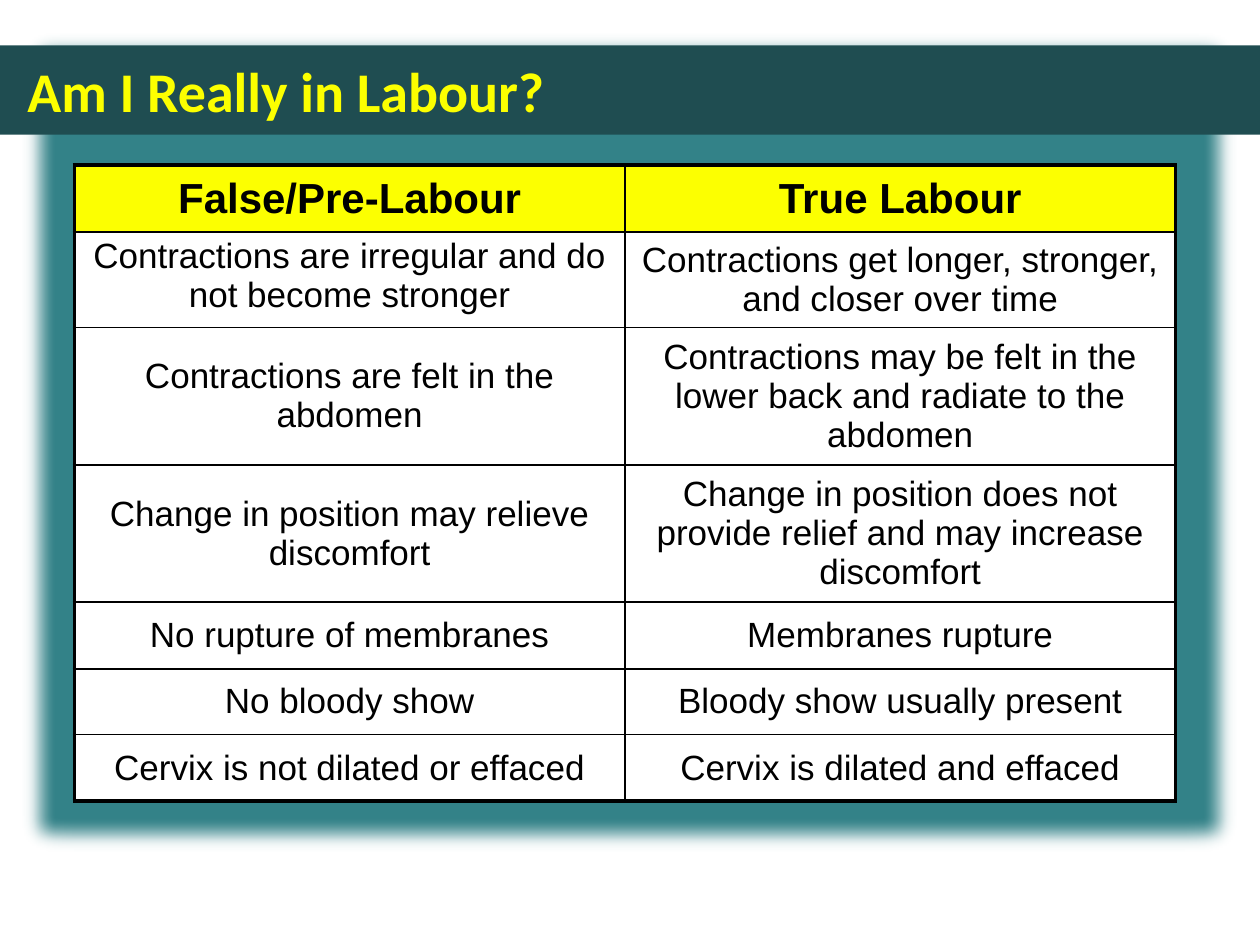
from lxml.etree import SubElement
from pptx import Presentation
from pptx.dml.color import RGBColor
from pptx.enum.shapes import MSO_SHAPE as Shape
from pptx.enum.text import MSO_ANCHOR as Anchor, PP_ALIGN as Align
from pptx.oxml.ns import qn
from pptx.util import Inches, Pt

TEAL = RGBColor(0x33, 0x82, 0x88)
DARK_TEAL = RGBColor(0x1F, 0x4D, 0x51)
TITLE_YELLOW = RGBColor(0xFC, 0xFF, 0x00)
HEADER_YELLOW = RGBColor(0xFC, 0xFF, 0x01)
WHITE = RGBColor(0xFF, 0xFF, 0xFF)
BLACK = RGBColor(0, 0, 0)

ROWS = [
    (0.53, "False/Pre-Labour", "True Labour"),
    (0.76, "Contractions are irregular and do not become stronger",
     "Contractions get longer, stronger, and closer over time"),
    (1.09, "Contractions are felt in the abdomen",
     "Contractions may be felt in the lower back and radiate to the abdomen"),
    (1.09, "Change in position may relieve discomfort",
     "Change in position does not provide relief and may increase discomfort"),
    (0.53, "No rupture of membranes", "Membranes rupture"),
    (0.52, "No bloody show", "Bloody show usually present"),
    (0.53, "Cervix is not dilated or effaced", "Cervix is dilated and effaced"),
]
COLUMN_WIDTH = 4.37


def add_block(page, left, top, width, height, color):
    block = page.shapes.add_shape(
        Shape.RECTANGLE, Inches(left), Inches(top), Inches(width), Inches(height))
    block.shadow.inherit = False
    block.fill.solid()
    block.fill.fore_color.rgb = color
    block.line.fill.background()
    return block


def set_borders(cell, outer_sides):
    properties = cell._tc.get_or_add_tcPr()
    for index, side in enumerate(("lnL", "lnR", "lnT", "lnB")):
        width = Pt(2.25 if side in outer_sides else 1)
        line = properties.makeelement(qn(f"a:{side}"), {"w": str(width)})
        fill = SubElement(line, qn("a:solidFill"))
        SubElement(fill, qn("a:srgbClr"), val=str(BLACK))
        properties.insert(index, line)


deck = Presentation()
deck.slide_width, deck.slide_height = Inches(10), Inches(7.5)
page = deck.slides.add_slide(deck.slide_layouts[6])

panel = add_block(page, 0.12, 0.21, 9.76, 6.61, TEAL)
effects = panel._element.spPr.find(qn("a:effectLst"))
SubElement(effects, qn("a:softEdge"), rad=str(Pt(12.5)))
add_block(page, 0, 0.36, 10, 0.71, DARK_TEAL)

title = page.shapes.add_textbox(Inches(0.12), Inches(0.36), Inches(9.76), Inches(0.79))
frame = title.text_frame
frame.word_wrap = True
frame.vertical_anchor = Anchor.MIDDLE
frame.margin_bottom = Inches(0.13)
para = frame.paragraphs[0]
para.text = "Am I Really in Labour?"
para.font.name, para.font.size, para.font.bold = "Calibri", Pt(32), True
para.font.color.rgb = TITLE_YELLOW

table = page.shapes.add_table(
    len(ROWS), 2, Inches(0.59), Inches(1.31), Inches(2 * COLUMN_WIDTH),
    Inches(sum(row[0] for row in ROWS))).table
for column in table.columns:
    column.width = Inches(COLUMN_WIDTH)

for r, (height, *texts) in enumerate(ROWS):
    table.rows[r].height = Inches(height)
    header = r == 0
    for c, text in enumerate(texts):
        cell = table.cell(r, c)
        cell.fill.solid()
        cell.fill.fore_color.rgb = HEADER_YELLOW if header else WHITE
        cell.vertical_anchor = Anchor.TOP if (r, c) == (1, 0) else Anchor.MIDDLE
        cell.margin_left = cell.margin_right = Inches(0.09)
        cell.margin_top = cell.margin_bottom = Inches(0.04)
        para = cell.text_frame.paragraphs[0]
        para.text = text
        para.alignment = Align.CENTER
        para.font.name, para.font.bold = "Arial", header
        para.font.size = Pt(24 if header else 20)
        para.font.color.rgb = BLACK
        outer_sides = ["lnR" if c else "lnL"]
        if header:
            outer_sides.append("lnT")
        if r == len(ROWS) - 1:
            outer_sides.append("lnB")
        set_borders(cell, outer_sides)

deck.save("out.pptx")
